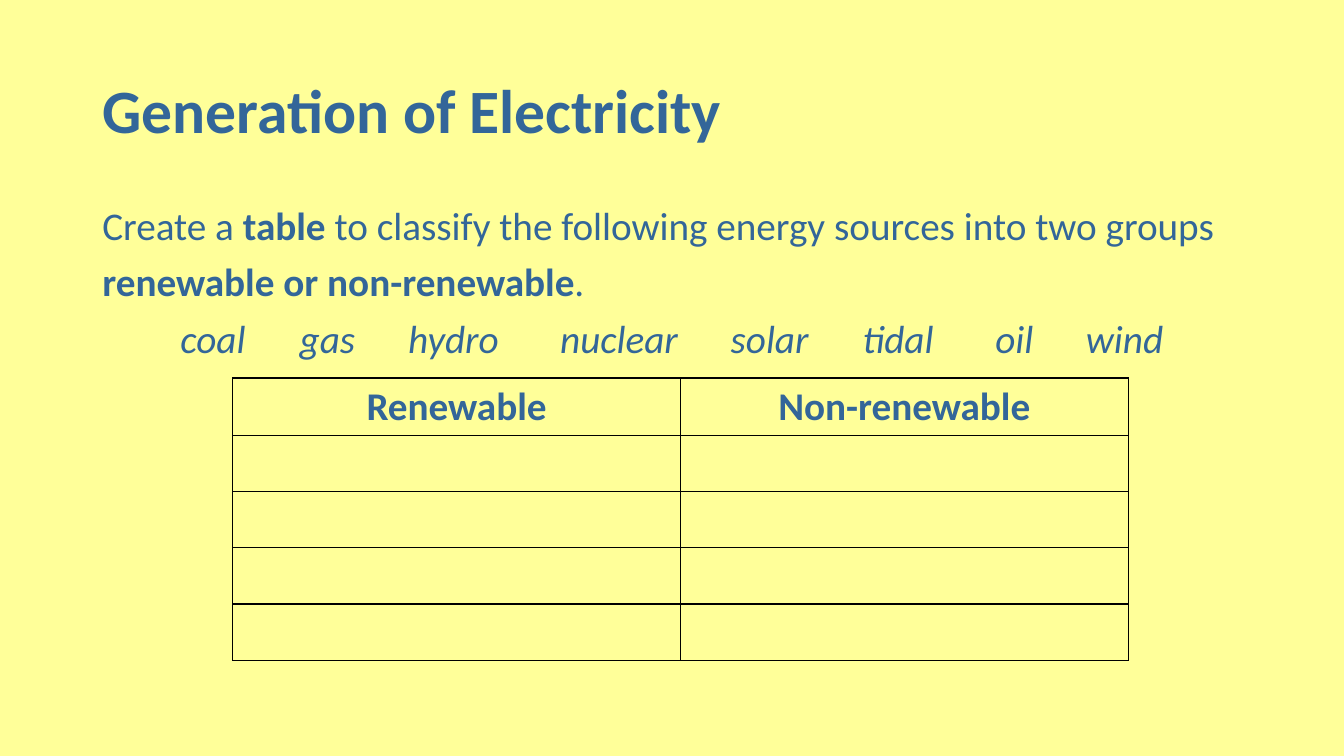
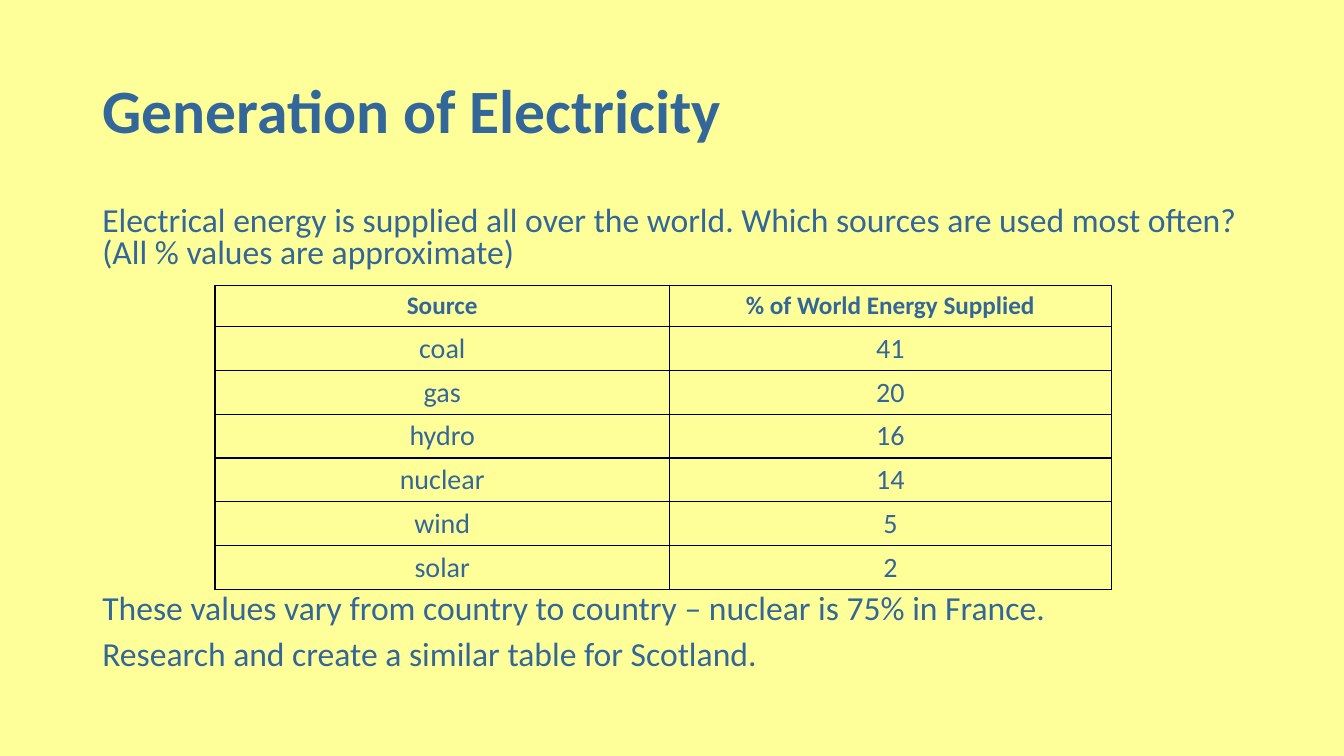
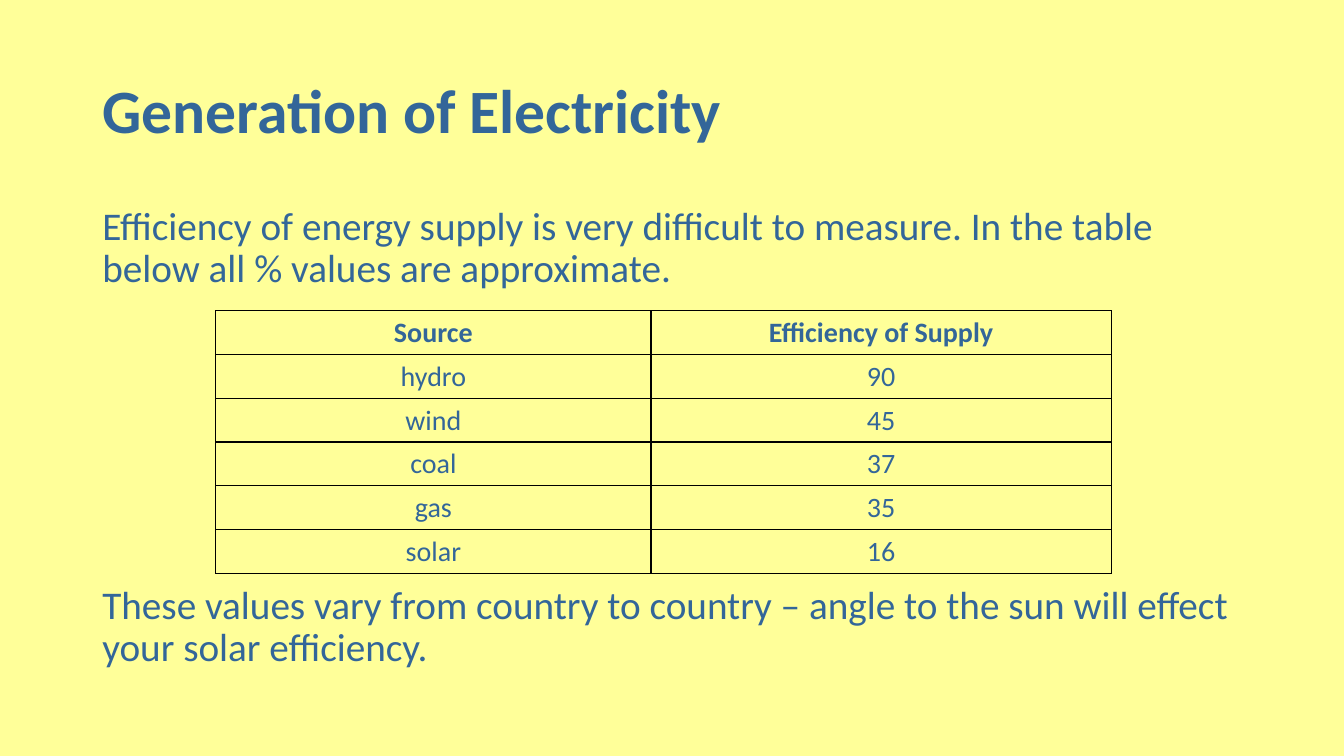
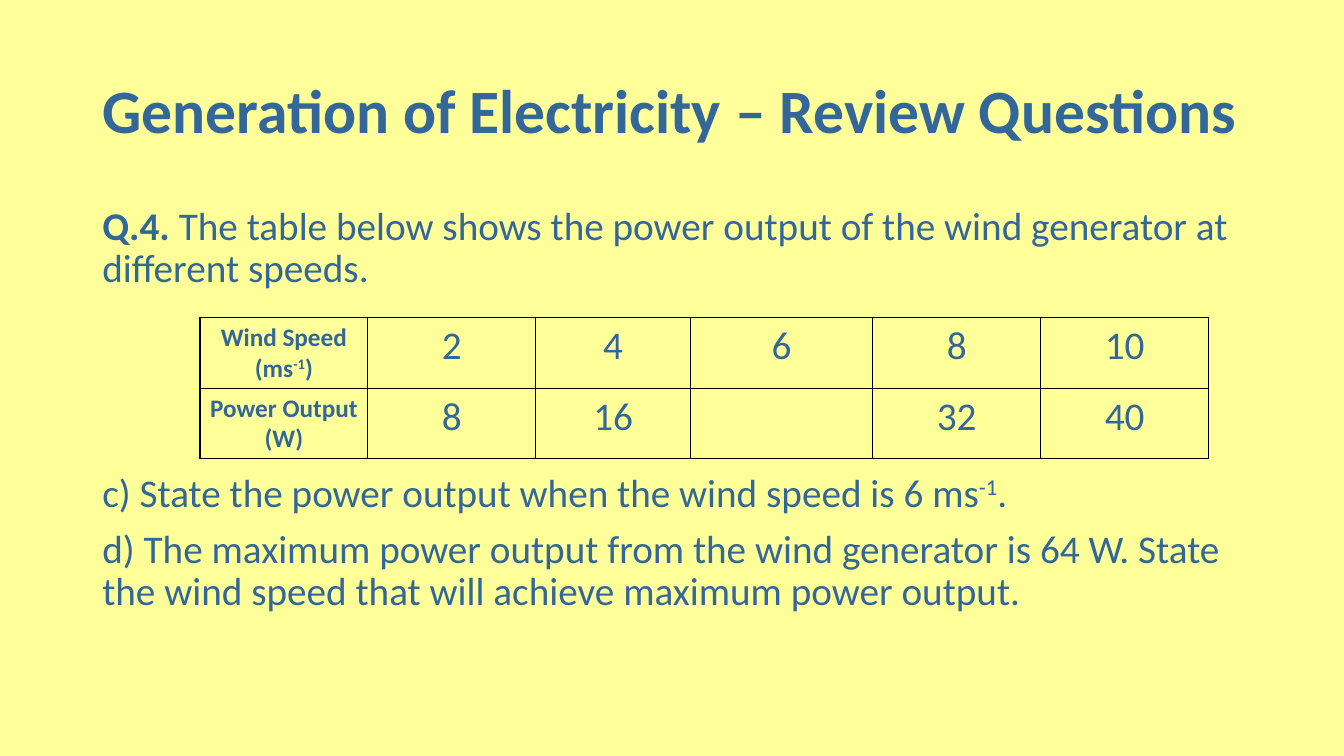
"""Build four lesson slides on the generation of electricity."""
from dataclasses import dataclass

from lxml.etree import SubElement
from pptx import Presentation
from pptx.dml.color import RGBColor
from pptx.enum.text import MSO_ANCHOR, MSO_AUTO_SIZE, PP_ALIGN
from pptx.oxml.ns import qn
from pptx.util import Inches, Pt

HEADING = "Generation of Electricity"
BOLD = {"bold": True}
RAISED = {"baseline": "30000"}


@dataclass(frozen=True)
class Theme:
    """Colours, type sizes and the page grid."""
    paper: RGBColor = RGBColor(0xFF, 0xFF, 0x99)
    ink: RGBColor = RGBColor(0x33, 0x66, 0x99)
    rule: str = "000000"
    font: str = "Calibri"
    title: int = 44
    body: int = 28
    compact: int = 24
    cell: int = 20
    label: int = 18
    columns: int = 160
    rows: int = 90
    rule_width: int = 1
    title_area: tuple = (11, 4.8, 138, 17.4)
    body_area: tuple = (11, 24, 138, 57.1)


def apply_format(target, values):
    """Set each named attribute of the target."""
    for name, value in values.items():
        setattr(target, name, value)


def as_list(content):
    """Wrap a single item in a list."""
    return content if isinstance(content, list) else [content]


class Lesson:
    """Holds the theme, the deck and the current page."""

    def __init__(self, theme):
        """Start a wide deck with a coloured master."""
        self.theme = theme
        self.deck = Presentation()
        apply_format(self.deck, {"slide_width": Inches(13.33), "slide_height": Inches(7.5)})
        fill = self.deck.slide_master.background.fill
        fill.solid()
        fill.fore_color.rgb = theme.paper
        self.page = None

    def across(self, columns):
        """Convert grid columns to a length."""
        return round(self.deck.slide_width * columns / self.theme.columns)

    def down(self, rows):
        """Convert grid rows to a length."""
        return round(self.deck.slide_height * rows / self.theme.rows)

    def area(self, left, top, width, height):
        """Convert a grid area to left, top, width and height."""
        return self.across(left), self.down(top), self.across(width), self.down(height)

    def fill_para(self, para, spans, size, layout, **style):
        """Fill a paragraph with formatted spans."""
        apply_format(para, layout)
        for item in as_list(spans):
            text, extra = item if isinstance(item, tuple) else (item, {})
            span = para.add_run()
            span.text = text
            values = {"name": self.theme.font, "size": Pt(size), "bold": False, **style, **extra}
            baseline = values.pop("baseline", None)
            apply_format(span.font, values)
            span.font.color.rgb = self.theme.ink
            if baseline:
                span._r.get_or_add_rPr().set("baseline", baseline)

    def add_page(self, heading):
        """Add a page and format its title."""
        self.page = self.deck.slides.add_slide(self.deck.slide_layouts[5])
        box = self.page.shapes.title
        places = ("left", "top", "width", "height")
        apply_format(box, dict(zip(places, self.area(*self.theme.title_area))))
        apply_format(box.text_frame, {"word_wrap": True, "auto_size": MSO_AUTO_SIZE.NONE,
                                      "vertical_anchor": MSO_ANCHOR.MIDDLE})
        self.fill_para(box.text_frame.paragraphs[0], heading, self.theme.title,
                       {"alignment": PP_ALIGN.LEFT, "line_spacing": 0.9}, bold=True)

    def add_body(self, lines, size, spacing=0.9, gaps=None):
        """Add the body text; gaps gives wider space before some lines."""
        frame = self.page.shapes.add_textbox(*self.area(*self.theme.body_area)).text_frame
        frame.word_wrap = True
        for index, spans in enumerate(lines):
            para = frame.add_paragraph() if index else frame.paragraphs[0]
            before = Pt((gaps or {}).get(index, 10))
            self.fill_para(para, spans, size, {"line_spacing": spacing, "space_before": before})
        return frame

    def add_word_row(self, frame, words, stops):
        """Add italic words, each at its own tab stop."""
        para = frame.add_paragraph()
        self.fill_para(para, "".join("\t" + word for word in words), self.theme.body,
                       {"line_spacing": 0.9, "space_before": Pt(10)}, italic=True)
        tabs = SubElement(para._p.get_or_add_pPr(), qn("a:tabLst"))
        for stop in stops:
            SubElement(tabs, qn("a:tab"), pos=str(self.across(stop)), algn="l")

    def add_borders(self, cell):
        """Rule all four sides of a cell."""
        properties = cell._tc.get_or_add_tcPr()
        for side in ("a:lnL", "a:lnR", "a:lnT", "a:lnB"):
            line = SubElement(properties, qn(side), w=str(Pt(self.theme.rule_width)))
            fill = SubElement(line, qn("a:solidFill"))
            SubElement(fill, qn("a:srgbClr"), val=self.theme.rule)

    def add_table(self, cells, left, top, widths, height, size, label_size, labels="row"):
        """Add a ruled table whose first row or column holds bold labels."""
        area = self.area(left, top, sum(widths), height * len(cells))
        table = self.page.shapes.add_table(len(cells), len(widths), *area).table
        apply_format(table, {"first_row": False, "horz_banding": False})
        for column, width in zip(table.columns, widths):
            column.width = self.across(width)
        for row_index, row in enumerate(cells):
            table.rows[row_index].height = self.down(height)
            for column_index, content in enumerate(row):
                cell = table.cell(row_index, column_index)
                self.add_borders(cell)
                cell.fill.background()
                is_label = (row_index if labels == "row" else column_index) == 0
                for index, spans in enumerate(as_list(content) if content else []):
                    frame = cell.text_frame
                    para = frame.add_paragraph() if index else frame.paragraphs[0]
                    self.fill_para(para, spans, label_size if is_label else size,
                                   {"alignment": PP_ALIGN.CENTER}, bold=is_label)


def main():
    """Build and save the lesson."""
    theme = Theme()
    lesson = Lesson(theme)

    lesson.add_page(HEADING)
    frame = lesson.add_body([
        ["Create a ", ("table", BOLD),
         " to classify the following energy sources into two groups"],
        [("renewable or non-renewable", BOLD), "."],
    ], theme.body)
    lesson.add_word_row(
        frame, ["coal", "gas", "hydro", "nuclear", "solar", "tidal", "oil", "wind"],
        [9.3, 23.5, 36.4, 54.5, 74.8, 90.5, 106.3, 117.1])
    lesson.add_table([["Renewable", "Non-renewable"]] + [["", ""]] * 4,
                     27.7, 45, [53.3, 53.3], 6.7, theme.body, theme.body)

    lesson.add_page(HEADING)
    lesson.add_body([
        "Electrical energy is supplied all over the world. Which sources are used most often? "
        "(All % values are approximate)",
        "These values vary from country to country – nuclear is 75% in France.",
        "Research and create a similar table for Scotland.",
    ], theme.compact, 0.8, {1: 231})
    lesson.add_table([
        ["Source", "% of World Energy Supplied"], ["coal", "41"], ["gas", "20"],
        ["hydro", "16"], ["nuclear", "14"], ["wind", "5"], ["solar", "2"],
    ], 25.6, 34, [54.1, 52.6], 4.9, theme.cell, theme.label)

    lesson.add_page(HEADING)
    lesson.add_body([
        "Efficiency of energy supply is very difficult to measure. In the table below all % "
        "values are approximate.",
        "These values vary from country to country – angle to the sun will effect your solar "
        "efficiency.",
    ], theme.body, gaps={1: 210})
    lesson.add_table([
        ["Source", "Efficiency of Supply"], ["hydro", "90"], ["wind", "45"],
        ["coal", "37"], ["gas", "35"], ["solar", "16"],
    ], 25.7, 37, [51.8, 54.8], 4.9, theme.cell, theme.cell)

    lesson.add_page(HEADING + " – Review Questions")
    lesson.add_body([
        [("Q.4.", BOLD),
         " The table below shows the power output of the wind generator at different speeds."],
        ["c) State the power output when the wind speed is 6 ms", ("-1", RAISED), "."],
        "d) The maximum power output from the wind generator is 64 W. State the wind speed that "
        "will achieve maximum power output.",
    ], theme.body, gaps={1: 130})
    lesson.add_table([
        [["Wind Speed", ["(ms", ("-1", RAISED), ")"]], "2", "4", "6", "8", "10"],
        [["Power Output", "(W)"], "8", "16", "", "32", "40"],
    ], 23.8, 37.8, [20, 20, 18.4, 21.7, 20, 20], 8.4, theme.body, theme.label, "column")

    lesson.deck.save("out.pptx")


if __name__ == "__main__":
    main()
